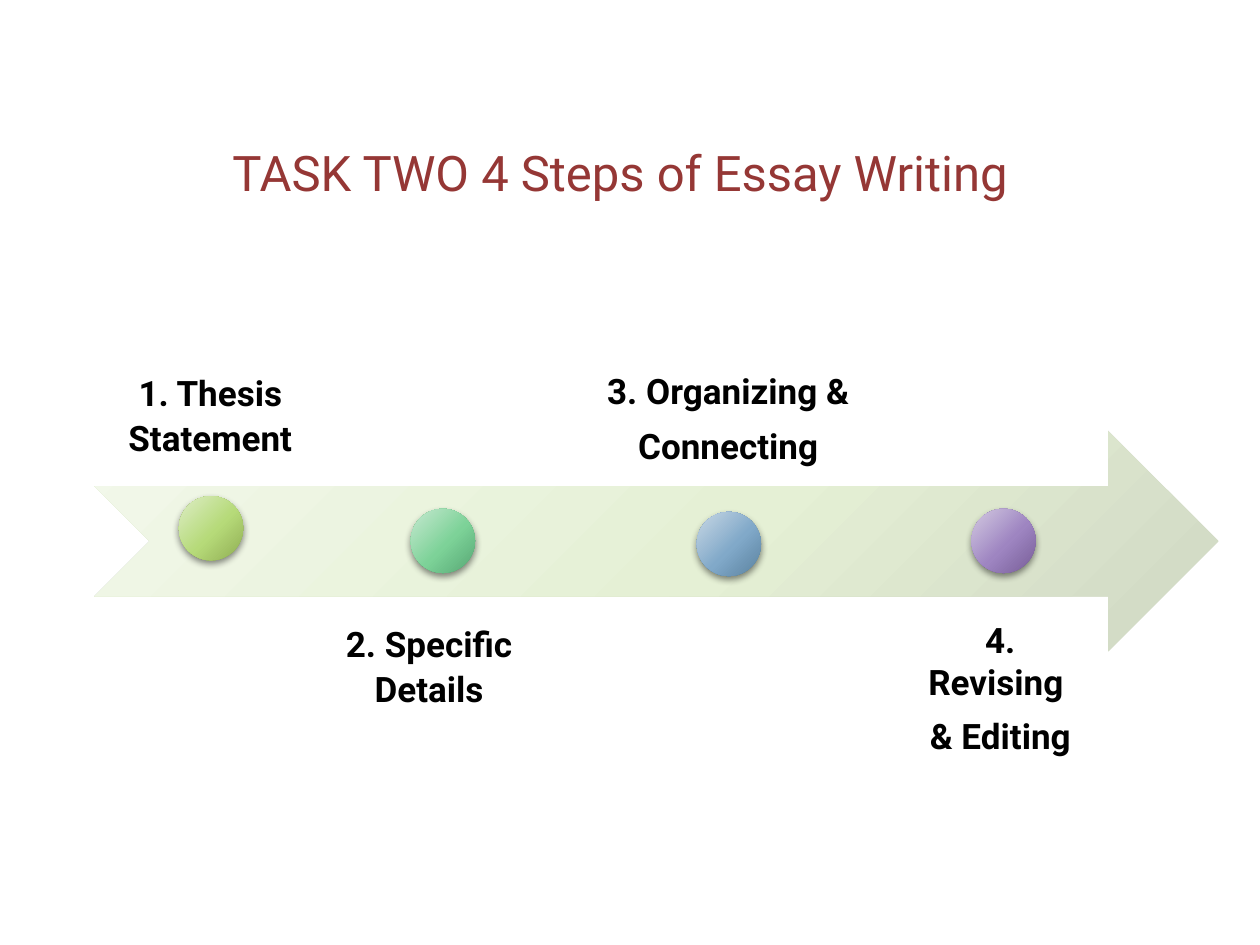
from dataclasses import dataclass
from typing import Optional

from lxml.etree import SubElement
from pptx import Presentation
from pptx.dml.color import RGBColor
from pptx.enum.shapes import MSO_SHAPE
from pptx.enum.text import MSO_ANCHOR, PP_ALIGN
from pptx.oxml.ns import qn
from pptx.util import Pt

Box = tuple[float, float, float, float]  # left, top, width, height in points
Shades = tuple[str, str, str]  # light, middle, dark


@dataclass(frozen=True)
class Theme:
    font: str = "Roboto"
    title_size: float = 28
    label_size: float = 20
    title: str = "953735"
    label: str = "000000"
    shadow: str = "000000"
    arrow: Shades = ("F2F8EA", "E5F0D5", "CFD7C3")
    green: Shades = ("DDEDC6", "B6DA79", "90AE53")
    mint: Shades = ("C7E9D1", "7DD298", "56A774")
    blue: Shades = ("C9D8E5", "81A9C9", "5A829F")
    violet: Shades = ("D4CBE2", "9E85C1", "775D97")


@dataclass(frozen=True)
class Step:
    lines: tuple[str, ...]
    label_box: Box
    dot_left: float
    dot_top: float
    shades: Shades
    above: bool
    line_height: Optional[float] = None


THEME = Theme()
DOT = 36.75
INSET = 11.5
PARAGRAPH_GAP = 7
ARROW_BOX = (54, 246.25, 642.25, 126)
TITLE_BOX = (30.25, 77.75, 648, 72)
STEPS = (
    Step(("1. Thesis Statement",), (54.75, 156.25, 131, 117.35),
         102.25, 283.5, THEME.green, True, 26),
    Step(("2. Specific Details",), (181.5, 342, 127.5, 146.15),
         234.75, 290.75, THEME.mint, False, 26),
    Step(("3. Organizing &", "Connecting"), (320.4, 124.55, 191.5, 153.35),
         398.15, 292.5, THEME.blue, True),
    Step(("4. Revising ", "& Editing"), (514, 342, 115.2, 146.15),
         555.1, 290.75, THEME.violet, False),
)


def add_run(p, text: str, size: float, color: str, bold: bool = False) -> None:
    r = p.add_run()
    r.text = text
    r.font.name = THEME.font
    r.font.size = Pt(size)
    r.font.bold = bold
    r.font.color.rgb = RGBColor.from_string(color)


def fill_radial(sp, shades: Shades) -> None:
    """Fill with a circular gradient centred far outside the shape."""
    sp.fill.gradient()
    grad = sp._element.spPr.find(qn("a:gradFill"))
    for child in list(grad):
        grad.remove(child)
    stops = SubElement(grad, qn("a:gsLst"))
    for pos, color in zip((0, 55, 100), shades):
        stop = SubElement(stops, qn("a:gs"), pos=str(pos * 1000))
        SubElement(stop, qn("a:srgbClr"), val=color)
    circle = SubElement(grad, qn("a:path"), path="circle")
    SubElement(circle, qn("a:fillToRect"),
               l="-40000", t="-90000", r="140000", b="190000")


def add_shaded(s, kind: MSO_SHAPE, box: Box, shades: Shades):
    sp = s.shapes.add_shape(kind, *map(Pt, box))
    sp.shadow.inherit = False
    sp.line.fill.background()
    fill_radial(sp, shades)
    return sp


def add_drop_shadow(sp) -> None:
    effects = sp._element.spPr.find(qn("a:effectLst"))
    shadow = SubElement(effects, qn("a:outerShdw"), blurRad=str(Pt(4)),
                        dist=str(Pt(2)), dir="5400000", rotWithShape="0")
    color = SubElement(shadow, qn("a:srgbClr"), val=THEME.shadow)
    SubElement(color, qn("a:alpha"), val="45000")


def add_label(s, step: Step) -> None:
    tf = s.shapes.add_textbox(*map(Pt, step.label_box)).text_frame
    tf.word_wrap = True
    tf.vertical_anchor = MSO_ANCHOR.BOTTOM if step.above else MSO_ANCHOR.TOP
    tf.margin_left = tf.margin_right = Pt(INSET)
    tf.margin_top = tf.margin_bottom = Pt(INSET)
    for i, line in enumerate(step.lines):
        p = tf.add_paragraph() if i else tf.paragraphs[0]
        p.alignment = PP_ALIGN.CENTER
        p.space_after = Pt(PARAGRAPH_GAP)
        if step.line_height:
            p.line_spacing = Pt(step.line_height)
        add_run(p, line, THEME.label_size, THEME.label, bold=True)


def add_step(s, step: Step) -> None:
    add_label(s, step)
    dot = add_shaded(s, MSO_SHAPE.OVAL,
                     (step.dot_left, step.dot_top, DOT, DOT), step.shades)
    add_drop_shadow(dot)


def set_title(s, text: str) -> None:
    title = s.shapes.title
    title.left, title.top, title.width, title.height = map(Pt, TITLE_BOX)
    tf = title.text_frame
    tf.vertical_anchor = MSO_ANCHOR.TOP
    p = tf.paragraphs[0]
    p.alignment = PP_ALIGN.CENTER
    add_run(p, text, THEME.title_size, THEME.title)


def main() -> None:
    prs = Presentation()
    prs.slide_width, prs.slide_height = Pt(720), Pt(540)
    s = prs.slides.add_slide(prs.slide_layouts[5])
    set_title(s, "TASK TWO 4 Steps of Essay Writing")
    add_shaded(s, MSO_SHAPE.NOTCHED_RIGHT_ARROW, ARROW_BOX, THEME.arrow)
    for step in STEPS:
        add_step(s, step)
    prs.save("out.pptx")


if __name__ == "__main__":
    main()
